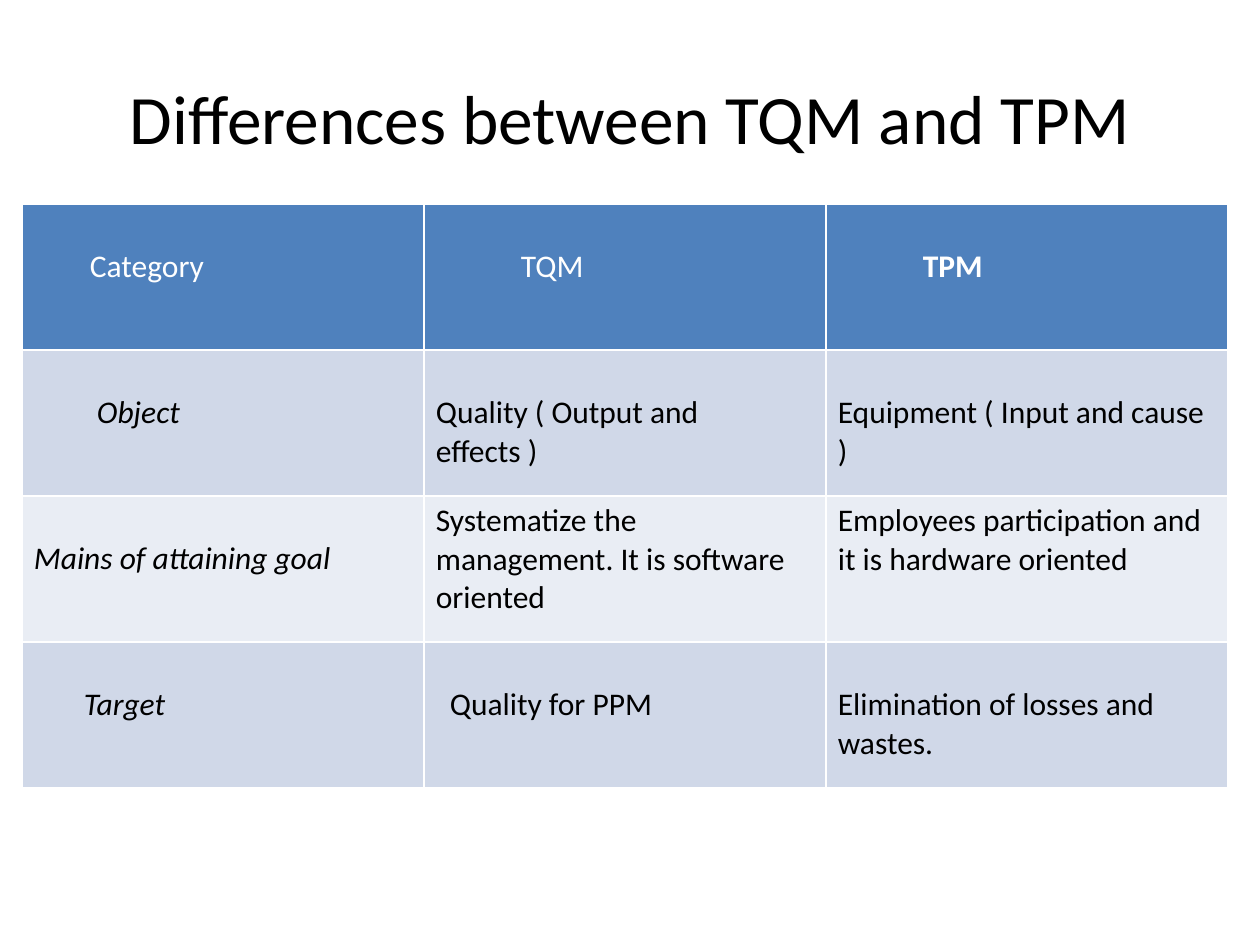
from lxml.etree import SubElement
from pptx import Presentation
from pptx.dml.color import RGBColor
from pptx.enum.text import MSO_ANCHOR as Anchor, PP_ALIGN as Align
from pptx.oxml.ns import qn
from pptx.util import Emu, Pt

PX_PER_INCH = 126
FONT = "Calibri"
WHITE, BLACK = "FFFFFF", "000000"
HEADER_FILL, BAND_FILLS = "4F81BD", ("D0D8E8", "E9EDF4")

# Table grid
LEFT, TOP, COLUMN_WIDTH, ROW_HEIGHT = 22, 204, 402, 146
MARGIN_X, MARGIN_Y, LINE = 12, 6, 38

# Each cell: text, indent, lines skipped above, extra right margin
ROWS = [
    [("Category", 56, 1, 0), ("TQM", 85, 1, 0), ("TPM", 85, 1, 0)],
    [("Object", 63, 1, 0), ("Quality ( Output and effects )", 0, 1, 60),
     ("Equipment ( Input and cause )", 0, 1, 10)],
    [("Mains of attaining goal", 0, 1, 0),
     ("Systematize the management. It is software oriented", 0, 0, 0),
     ("Employees participation and it is hardware oriented", 0, 0, 0)],
    [("Target", 50, 1, 0), ("Quality for PPM", 14, 1, 0),
     ("Elimination of losses and wastes.", 0, 1, 0)],
]


def px(length):
    return Emu(round(length * 914400 / PX_PER_INCH))


def color(value):
    return RGBColor.from_string(value)


def add_span(para, text, size, ink, bold=False, italic=False):
    span = para.add_run()
    span.text = text
    font = span.font
    font.name, font.size, font.bold, font.italic = FONT, Pt(size), bold, italic
    font.color.rgb = color(ink)


def add_title(page, text):
    box = page.shapes.add_textbox(px(63), px(38), px(1134), px(158))
    frame = box.text_frame
    frame.word_wrap = True
    frame.vertical_anchor = Anchor.MIDDLE
    para = frame.paragraphs[0]
    para.alignment = Align.CENTER
    add_span(para, text, 39.6, BLACK)


def add_borders(cell):
    properties = cell._tc.get_or_add_tcPr()
    for side in ("lnL", "lnR", "lnT", "lnB"):
        line = SubElement(properties, qn(f"a:{side}"), w=str(Pt(1)))
        fill = SubElement(line, qn("a:solidFill"))
        SubElement(fill, qn("a:srgbClr"), val=WHITE)


def fill_cell(cell, content, row, column):
    text, indent, skipped, narrowing = content
    header = row == 0
    add_borders(cell)
    cell.fill.solid()
    cell.fill.fore_color.rgb = color(HEADER_FILL if header else BAND_FILLS[(row - 1) % 2])
    cell.margin_left = px(MARGIN_X + indent)
    cell.margin_right = px(MARGIN_X + narrowing)
    cell.margin_top = px(MARGIN_Y + skipped * LINE)
    cell.margin_bottom = px(MARGIN_Y)
    add_span(cell.text_frame.paragraphs[0], text, 18, WHITE if header else BLACK,
             bold=header and column == 2, italic=not header and column == 0)


def add_comparison(page, rows):
    count, width = len(rows), len(rows[0])
    table = page.shapes.add_table(count, width, px(LEFT), px(TOP),
                                  px(width * COLUMN_WIDTH), px(count * ROW_HEIGHT)).table
    for row, contents in enumerate(rows):
        for column, content in enumerate(contents):
            fill_cell(table.cell(row, column), content, row, column)


def main():
    deck = Presentation()
    deck.slide_width, deck.slide_height = px(1260), px(945)
    page = deck.slides.add_slide(deck.slide_layouts[6])
    add_comparison(page, ROWS)
    add_title(page, "Differences between TQM and TPM")
    deck.save("out.pptx")


if __name__ == "__main__":
    main()
